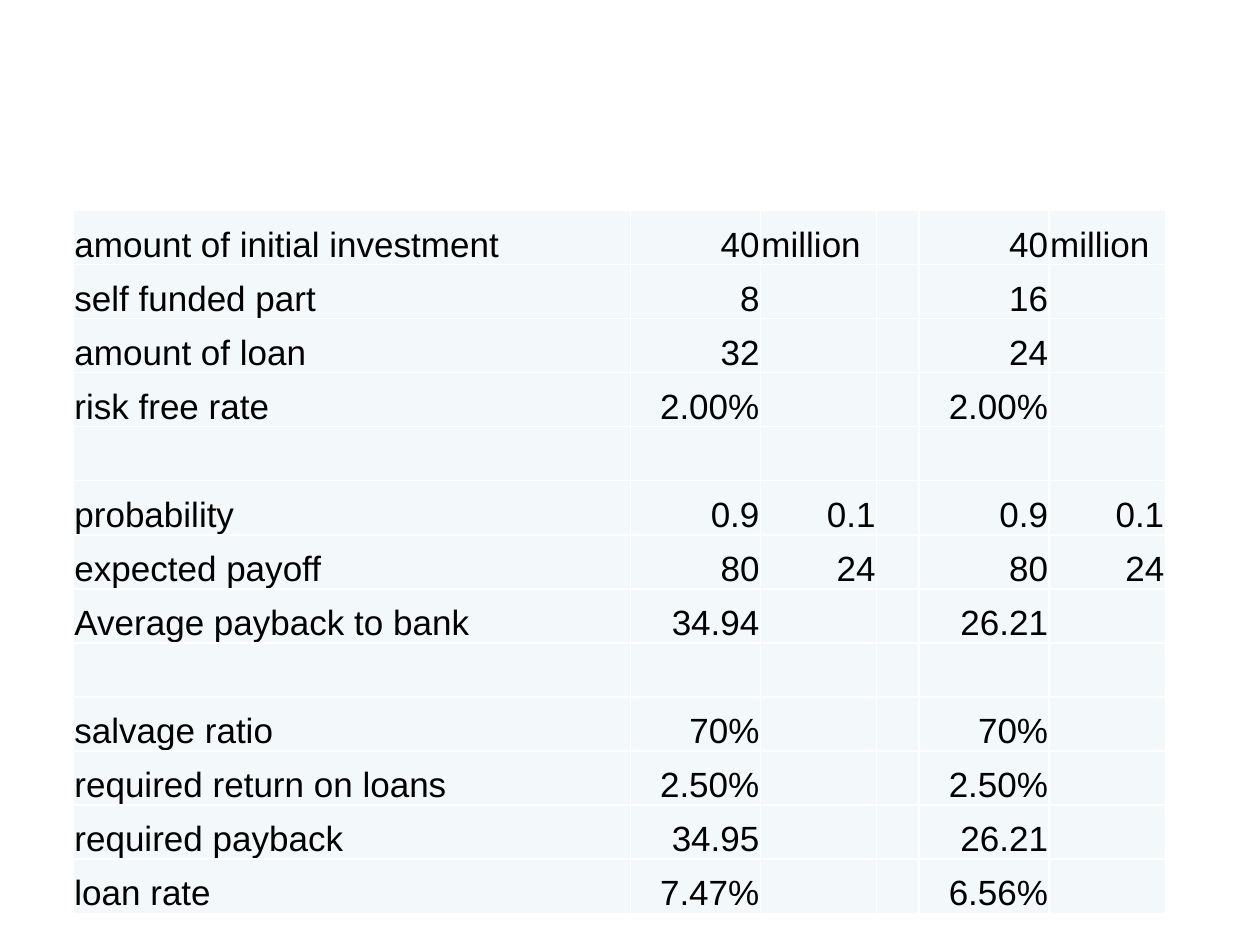
from lxml import etree
from pptx import Presentation
from pptx.dml.color import RGBColor
from pptx.enum.text import MSO_ANCHOR, PP_ALIGN
from pptx.oxml.ns import qn
from pptx.util import Cm, Pt

BLACK = RGBColor(0x00, 0x00, 0x00)
WHITE = RGBColor(0xFF, 0xFF, 0xFF)
PALE_BLUE = RGBColor(0xF3, 0xF9, 0xFA)
LEFT, RIGHT = PP_ALIGN.LEFT, PP_ALIGN.RIGHT
BOTTOM = MSO_ANCHOR.BOTTOM

BLANK_LAYOUT = 6
FONT_NAME, FONT_SIZE = "Arial", Pt(20)
BORDER_WIDTH = Pt(1)
CELL_MARGIN = Cm(0.02)
TABLE_LEFT, TABLE_TOP = Cm(1.48), Cm(4.24)
ROW_HEIGHT = Cm(1.09)
LABEL_WIDTH = Cm(11.23)
VALUE_WIDTH, SIDE_WIDTH, GAP_WIDTH = Cm(2.62), Cm(2.34), Cm(0.86)
COLUMN_WIDTHS = [LABEL_WIDTH, VALUE_WIDTH, SIDE_WIDTH, GAP_WIDTH, VALUE_WIDTH, SIDE_WIDTH]

# Label, first loan, second loan, and the side entry shared by both loans
LOAN_ROWS = [
    ("amount of initial investment", "40", "40", "million"),
    ("self funded part", "8", "16", ""),
    ("amount of loan", "32", "24", ""),
    ("risk free rate", "2.00%", "2.00%", ""),
    ("", "", "", ""),
    ("probability", "0.9", "0.9", "0.1"),
    ("expected payoff", "80", "80", "24"),
    ("Average payback to bank", "34.94", "26.21", ""),
    ("", "", "", ""),
    ("salvage ratio", "70%", "70%", ""),
    ("required return on loans", "2.50%", "2.50%", ""),
    ("required payback", "34.95", "26.21", ""),
    ("loan rate", "7.47%", "6.56%", ""),
]


def set_borders(cell):
    """Draw the same thin white line on all four sides of a cell."""
    properties = cell._tc.get_or_add_tcPr()
    for position, side in enumerate(("lnL", "lnR", "lnT", "lnB")):
        line = etree.Element(qn(f"a:{side}"), w=str(BORDER_WIDTH))
        fill = etree.SubElement(line, qn("a:solidFill"))
        etree.SubElement(fill, qn("a:srgbClr"), val=str(WHITE))
        properties.insert(position, line)


def format_cell(cell, text):
    cell.fill.solid()
    cell.fill.fore_color.rgb = PALE_BLUE
    set_borders(cell)
    if not text:
        return
    cell.vertical_anchor = BOTTOM
    cell.margin_left = cell.margin_right = cell.margin_top = CELL_MARGIN
    cell.margin_bottom = 0
    paragraph = cell.text_frame.paragraphs[0]
    paragraph.text = text
    # Numbers go to the right, words to the left
    paragraph.alignment = RIGHT if text[0].isdigit() else LEFT
    font = paragraph.runs[0].font
    font.name, font.size, font.color.rgb = FONT_NAME, FONT_SIZE, BLACK


def add_loan_table(slide):
    frame = slide.shapes.add_table(
        len(LOAN_ROWS), len(COLUMN_WIDTHS), TABLE_LEFT, TABLE_TOP,
        sum(COLUMN_WIDTHS), ROW_HEIGHT * len(LOAN_ROWS))
    table = frame.table
    table.first_row = table.horz_banding = False
    for column, width in zip(table.columns, COLUMN_WIDTHS):
        column.width = width
    for row, (label, first_loan, second_loan, side) in zip(table.rows, LOAN_ROWS):
        row.height = ROW_HEIGHT
        texts = (label, first_loan, side, "", second_loan, side)
        for cell, text in zip(row.cells, texts):
            format_cell(cell, text)


def main():
    presentation = Presentation()
    presentation.slide_width, presentation.slide_height = Cm(25.4), Cm(19.05)
    slide = presentation.slides.add_slide(presentation.slide_layouts[BLANK_LAYOUT])
    add_loan_table(slide)
    presentation.save("out.pptx")


if __name__ == "__main__":
    main()
